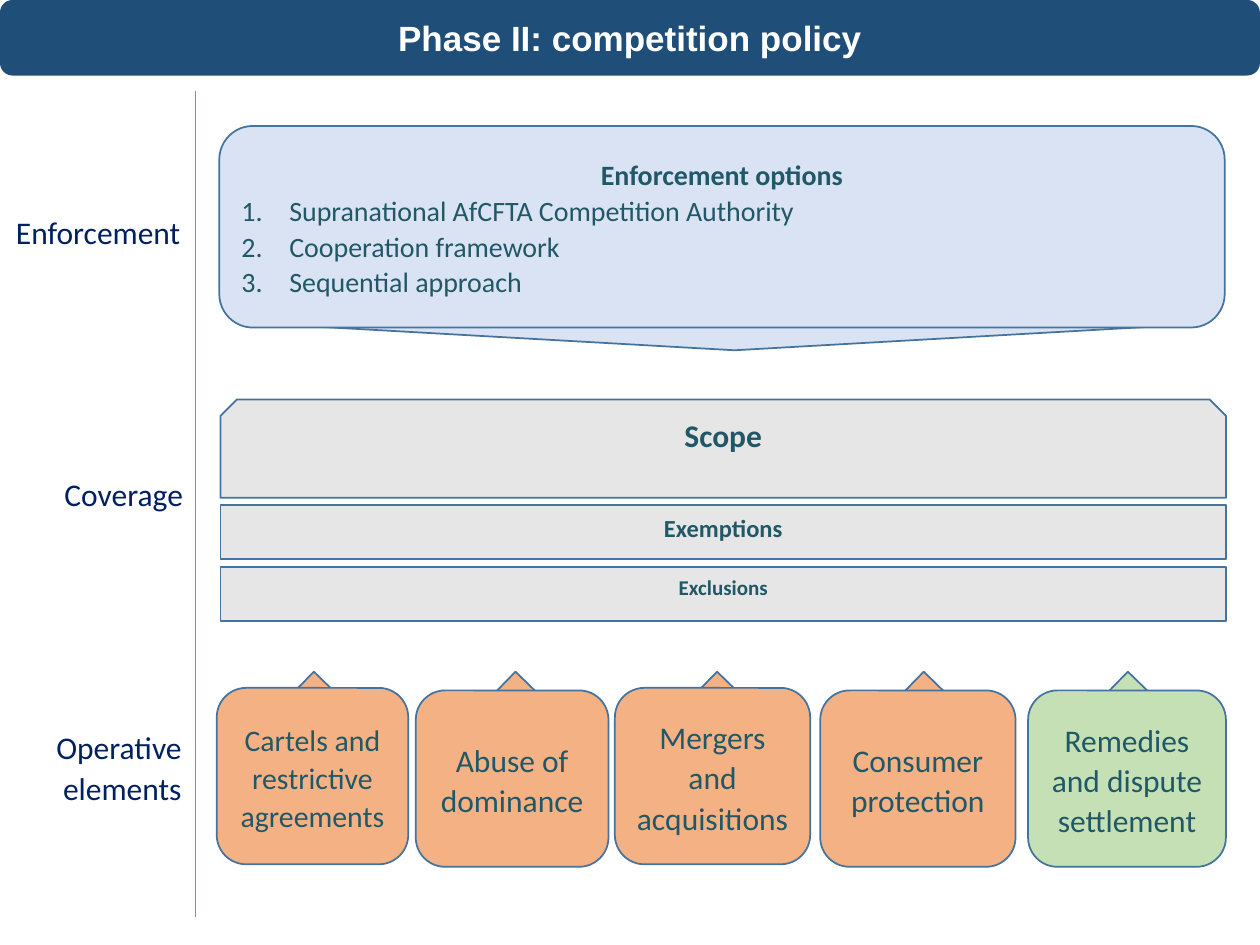
from lxml.etree import SubElement
from pptx import Presentation
from pptx.dml.color import RGBColor
from pptx.enum.shapes import MSO_CONNECTOR as Link, MSO_SHAPE as Shape
from pptx.enum.text import MSO_ANCHOR as Anchor, PP_ALIGN as Align
from pptx.oxml.ns import qn
from pptx.util import Inches, Pt

NAVY = RGBColor(0x1F, 0x4E, 0x79)
WHITE = RGBColor(0xFF, 0xFF, 0xFF)
INK = RGBColor(0x00, 0x20, 0x60)
TEAL = RGBColor(0x21, 0x58, 0x68)
EDGE = RGBColor(0x43, 0x73, 0x9E)
RULE = RGBColor(0x5B, 0x9B, 0xD5)
BLUE = RGBColor(0xDA, 0xE3, 0xF3)
GREY = RGBColor(0xE7, 0xE6, 0xE6)
PEACH = RGBColor(0xF4, 0xB1, 0x83)
GREEN = RGBColor(0xC5, 0xE0, 0xB4)

TITLE = "Phase II: competition policy"
LABELS = [  # text, box
    ("Enforcement", (0, 1.62, 1.53, 0.51)),
    ("Coverage", (0.37, 3.7, 1.18, 0.51)),
    ("Operative elements", (0.26, 5.71, 1.28, 0.86)),
]
HEAD = "Enforcement options"
OPTIONS = [
    "Supranational AfCFTA Competition Authority",
    "Cooperation framework",
    "Sequential approach",
]
COVER = [  # text, size, shape, top, height
    ("Scope", 18, Shape.SNIP_2_SAME_RECTANGLE, 3.17, 0.78),
    ("Exemptions", 14, Shape.RECTANGLE, 4.01, 0.43),
    ("Exclusions", 12, Shape.RECTANGLE, 4.5, 0.43),
]
PARTS = [  # text, size, fill, left, top, width, left of pointer
    ("Cartels and restrictive agreements", 17, PEACH, 1.72, 5.46, 1.52, 2.02),
    ("Abuse of dominance", 18, PEACH, 3.3, 5.48, 1.53, 3.62),
    ("Mergers and acquisitions", 18, PEACH, 4.88, 5.46, 1.55, 5.22),
    ("Consumer protection", 18, PEACH, 6.51, 5.48, 1.55, 6.86),
    ("Remedies and dispute settlement", 18, GREEN, 8.16, 5.48, 1.57, 8.48),
]
WIDE = 7.98


def place(box):
    return [Inches(n) for n in box]


def add_block(slide, kind, box, fill, edge=EDGE):
    block = slide.shapes.add_shape(kind, *place(box))
    block.shadow.inherit = False
    block.fill.solid()
    block.fill.fore_color.rgb = fill
    if edge is None:
        block.line.fill.background()
    else:
        block.line.color.rgb = edge
        block.line.width = Pt(1)
    return block


def write(shape, lines, size, color=TEAL, align=Align.CENTER, bold=False,
          anchor=Anchor.MIDDLE, after=8, face="Calibri", space=1.07):
    frame = shape.text_frame
    frame.word_wrap = True
    frame.vertical_anchor = anchor
    frame.text = "\n".join(lines)
    look = {"name": face, "size": Pt(size), "bold": bold}
    for para in frame.paragraphs:
        para.alignment = align
        para.line_spacing = space
        para.space_after = Pt(after)
        for key, value in look.items():
            setattr(para.font, key, value)
        para.font.color.rgb = color
    return frame


def number(para):
    """Turn a paragraph into a numbered item with a hanging indent."""
    para.alignment = Align.LEFT
    para.font.bold = False
    props = para._p.get_or_add_pPr()
    props.set("marL", str(Inches(0.38)))
    props.set("indent", str(-Inches(0.38)))
    mark = SubElement(props, qn("a:buAutoNum"), type="arabicPeriod")
    props.find(qn("a:defRPr")).addprevious(mark)


def main():
    deck = Presentation()
    deck.slide_width, deck.slide_height = Inches(10), Inches(7.5)
    slide = deck.slides.add_slide(deck.slide_layouts[5])

    bar = (0, 0, 10, 0.6)
    back = add_block(slide, Shape.ROUNDED_RECTANGLE, bar, NAVY, None)
    title = slide.shapes.title
    title.left, title.top, title.width, title.height = place(bar)
    write(title, [TITLE], 20, WHITE, bold=True, after=0, face="Arial", space=1)
    back._element.addnext(title._element)

    for text, box in LABELS:
        label = slide.shapes.add_textbox(*place(box))
        write(label, [text], 18, INK, Align.RIGHT, anchor=Anchor.TOP)

    rule = slide.shapes.add_connector(
        Link.STRAIGHT, *place((1.55, 0.72, 1.55, 7.28)))
    rule.line.color.rgb = RULE
    rule.line.width = Pt(0.5)
    SubElement(rule._element.spPr, qn("a:effectLst"))

    arrow = add_block(slide, Shape.DOWN_ARROW, (2.11, 2.36, 7.44, 0.42), BLUE)
    arrow.adjustments[0] = 1
    arrow.adjustments[1] = 0.5
    panel = add_block(slide, Shape.ROUNDED_RECTANGLE, (1.74, 1, WIDE, 1.6), BLUE)
    frame = write(panel, [HEAD, *OPTIONS], 16, bold=True, after=0)
    for para in frame.paragraphs[1:]:
        number(para)

    for text, size, kind, top, height in COVER:
        band = add_block(slide, kind, (1.75, top, WIDE, height), GREY)
        write(band, [text], size, bold=True, anchor=Anchor.TOP)

    for text, size, fill, left, top, width, tip in PARTS:
        drop = add_block(slide, Shape.TEAR, (tip, 5.53, 0.83, 0.65), fill)
        drop.rotation = 314.2
        card = add_block(
            slide, Shape.ROUNDED_RECTANGLE, (left, top, width, 1.4), fill)
        write(card, [text], size)

    deck.save("out.pptx")


if __name__ == "__main__":
    main()
